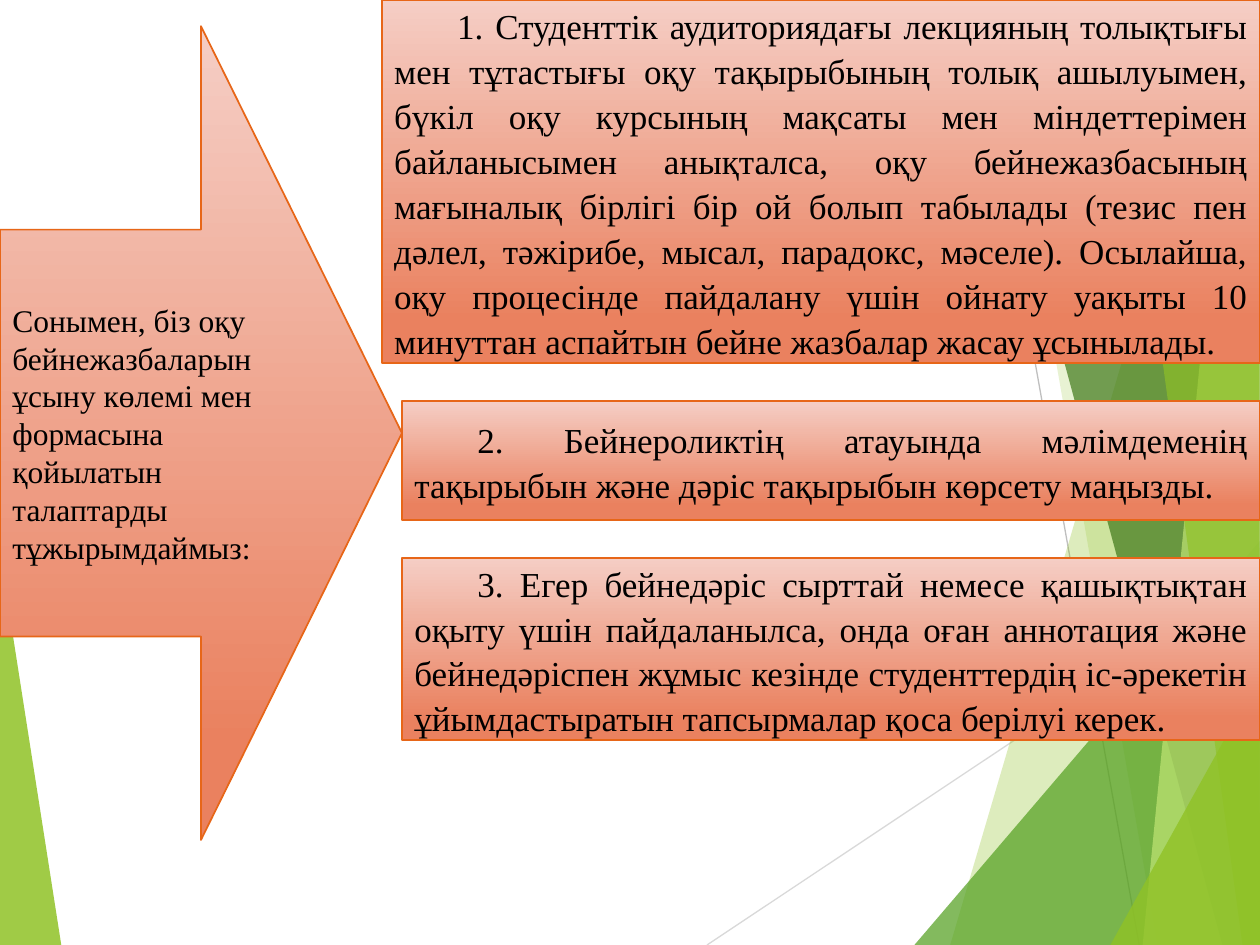
"""Build a slide with an arrow that leads to three numbered requirements."""
from lxml.etree import SubElement
from pptx import Presentation
from pptx.dml.color import RGBColor
from pptx.enum.shapes import MSO_CONNECTOR, MSO_SHAPE
from pptx.enum.text import MSO_ANCHOR, PP_ALIGN
from pptx.oxml.ns import qn
from pptx.util import Pt

WIDE, HIGH = 720, 540
FONT = "Times New Roman"
BLACK = RGBColor(0x00, 0x00, 0x00)
PALE = RGBColor(0xF5, 0xCE, 0xC5)
CORAL = RGBColor(0xEA, 0x81, 0x5F)
RUST = RGBColor(0xE7, 0x66, 0x18)
SILVER = RGBColor(0xD9, 0xD9, 0xD9)
GRAY = RGBColor(0xBF, 0xBF, 0xBF)
LIME = RGBColor(0x90, 0xC2, 0x26)
GREEN = RGBColor(0x54, 0xA0, 0x21)
MOSS = RGBColor(0x3F, 0x78, 0x19)
MINT = RGBColor(0xC0, 0xE4, 0x74)

RAYS = [
    ((404, HIGH), (WIDE, 329.5), SILVER),
    ((554.5, 0), (651, HIGH), GRAY),
]
SHARDS = [
    ([(0, 316), (35, HIGH), (0, HIGH)], LIME, 85),
    ([(702, 0), (543, HIGH), (WIDE, HIGH), (WIDE, 0)], LIME, 30),
    ([(567.5, 0), (661.5, HIGH), (WIDE, HIGH), (WIDE, 0)], LIME, 20),
    ([(522.5, HIGH), (WIDE, 309), (WIDE, HIGH)], GREEN, 72),
    ([(552, 0), (698.5, HIGH), (WIDE, HIGH), (WIDE, 0)], MOSS, 70),
    ([(706, 0), (653, HIGH), (WIDE, HIGH), (WIDE, 0)], MINT, 70),
    ([(636, 0), (710, HIGH), (WIDE, HIGH), (719, 0)], LIME, 65),
    ([(634.5, HIGH), (WIDE, 386), (WIDE, HIGH)], LIME, 80),
]
LEAD = ("Сонымен, біз оқу бейнежазбаларын ұсыну көлемі мен формасына "
        "қойылатын талаптарды тұжырымдаймыз:")
RULES = [
    (218.2, 0, 207.4,
     "1. Студенттік аудиториядағы лекцияның толықтығы мен тұтастығы оқу "
     "тақырыбының толық ашылуымен, бүкіл оқу курсының мақсаты мен "
     "міндеттерімен байланысымен анықталса, оқу бейнежазбасының мағыналық "
     "бірлігі бір ой болып табылады (тезис пен дәлел, тәжірибе, мысал, "
     "парадокс, мәселе). Осылайша, оқу процесінде пайдалану үшін ойнату "
     "уақыты 10 минуттан аспайтын бейне жазбалар жасау ұсынылады."),
    (229.7, 229, 68,
     "2. Бейнероликтің атауында мәлімдеменің тақырыбын және дәріс "
     "тақырыбын көрсету маңызды."),
    (229.7, 318.8, 104.2,
     "3. Егер бейнедәріс сырттай немесе қашықтықтан оқыту үшін "
     "пайдаланылса, онда оған аннотация және бейнедәріспен жұмыс кезінде "
     "студенттердің іс-әрекетін ұйымдастыратын тапсырмалар қоса берілуі "
     "керек."),
]


def add_ray(slide, start, end, color):
    """Draw a thin straight line across the backdrop."""
    ends = [Pt(n) for n in (*start, *end)]
    ray = slide.shapes.add_connector(MSO_CONNECTOR.STRAIGHT, *ends)
    ray.line.color.rgb = color
    ray.line.width = Pt(0.75)
    SubElement(ray._element.spPr, qn("a:effectLst"))


def add_shard(slide, points, color, alpha):
    """Draw a see-through polygon, with alpha in percent."""
    first, *rest = [(Pt(x), Pt(y)) for x, y in points]
    form = slide.shapes.build_freeform(*first)
    form.add_line_segments(rest)
    shard = form.convert_to_shape()
    shard.shadow.inherit = False
    shard.line.fill.background()
    shard.fill.solid()
    shard.fill.fore_color.rgb = color
    tint = shard._element.spPr.find(".//" + qn("a:srgbClr"))
    SubElement(tint, qn("a:alpha")).set("val", str(alpha * 1000))


def add_panel(slide, kind, place, text, size):
    """Add a gradient shape with its text and return the paragraph."""
    panel = slide.shapes.add_shape(kind, *[Pt(n) for n in place])
    panel.shadow.inherit = False
    panel.line.color.rgb = RUST
    panel.line.width = Pt(1)
    panel.fill.gradient()
    panel.fill.gradient_angle = 270
    stops = zip(panel.fill.gradient_stops, (PALE, CORAL), (0, 0.88))
    for stop, color, spot in stops:
        stop.color.rgb = color
        stop.position = spot
    frame = panel.text_frame
    frame.word_wrap = True
    frame.vertical_anchor = MSO_ANCHOR.MIDDLE
    para = frame.paragraphs[0]
    para.text = text
    para.alignment = PP_ALIGN.LEFT
    para.font.name = FONT
    para.font.size = Pt(size)
    para.font.color.rgb = BLACK
    return para


def add_rule(slide, left, top, height, text):
    """Add a justified requirement that reaches the right edge."""
    place = (left, top, WIDE - left, height)
    para = add_panel(slide, MSO_SHAPE.RECTANGLE, place, text, 20)
    para.alignment = PP_ALIGN.JUSTIFY
    para.line_spacing = 1.07
    para.space_after = Pt(8)
    para._p.get_or_add_pPr().set("indent", str(Pt(36)))


def main():
    """Build and save the slide."""
    deck = Presentation()
    deck.slide_width, deck.slide_height = Pt(WIDE), Pt(HIGH)
    slide = deck.slides.add_slide(deck.slide_layouts[6])
    add_shard(slide, *SHARDS[0])
    for ray in RAYS:
        add_ray(slide, *ray)
    for shard in SHARDS[1:]:
        add_shard(slide, *shard)
    add_panel(slide, MSO_SHAPE.RIGHT_ARROW, (0, 15, 229.7, 465), LEAD, 18)
    for rule in RULES:
        add_rule(slide, *rule)
    deck.save("out.pptx")


if __name__ == "__main__":
    main()
